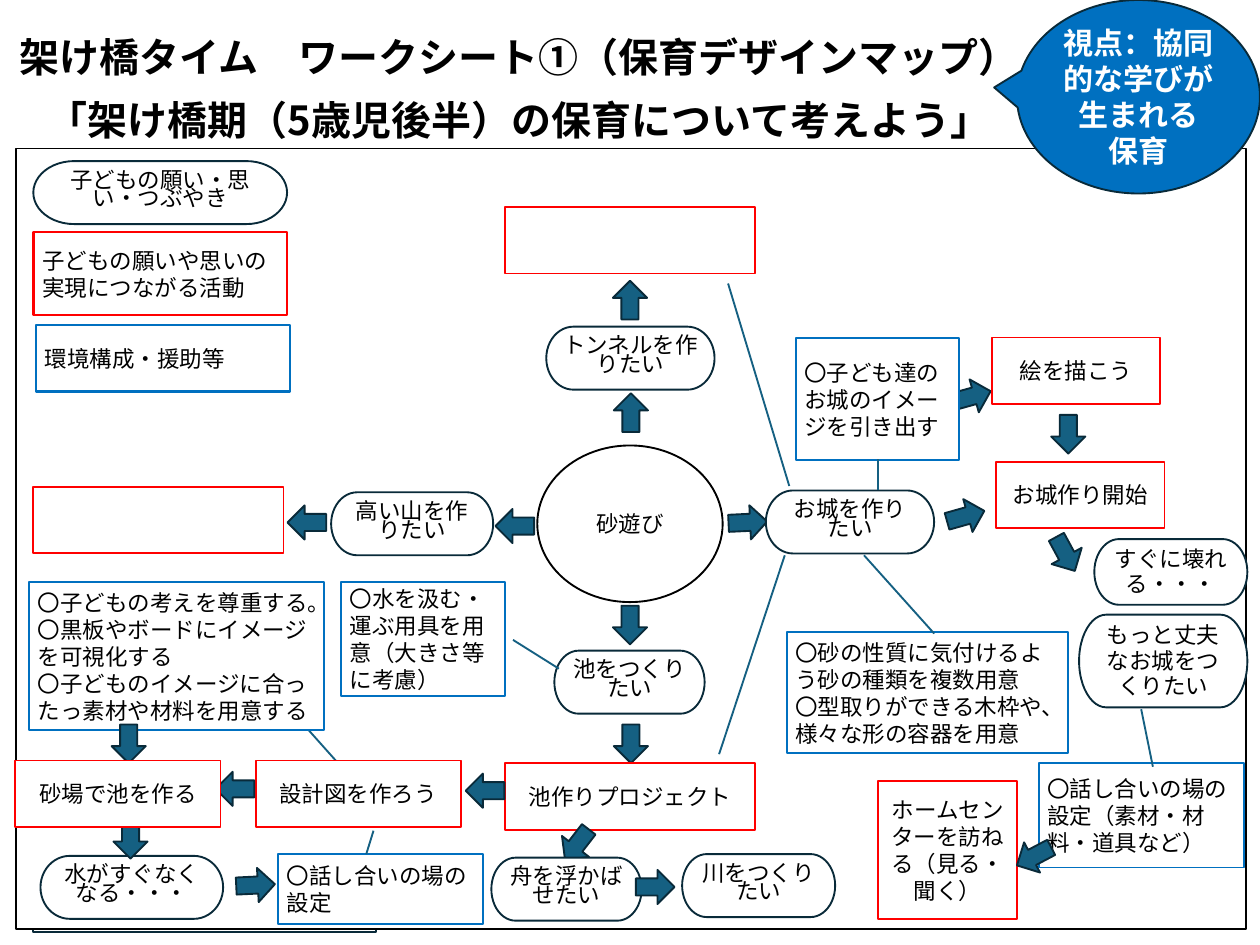
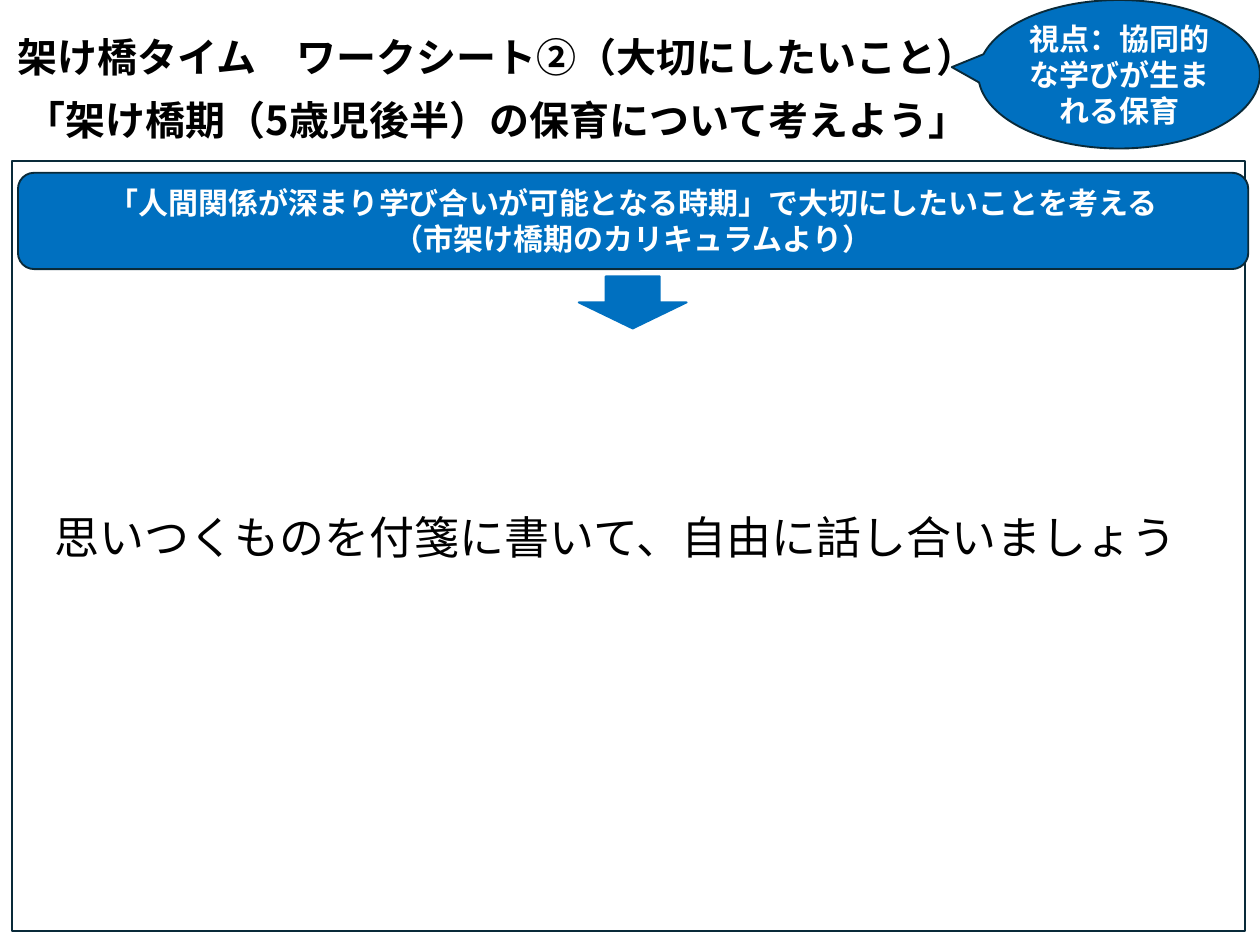
"""Builds two worksheets on planning childcare in the bridging period."""
from dataclasses import dataclass

from lxml import etree
from pptx import Presentation
from pptx import util as u
from pptx.dml.color import RGBColor
from pptx.enum import shapes, text
from pptx.oxml.ns import qn


@dataclass(frozen=True)
class Theme:
    white: str = "FFFFFF"
    black: str = "000000"
    outline: str = "092A39"
    red: str = "FF0000"
    blue: str = "0070C0"
    teal: str = "156082"
    heading_font: str = "Noto Sans CJK JP"
    body_font: str = "Lato"
    prompt_size: int = 36
    title_size: int = 32
    heading_size: int = 24
    body_size: int = 18
    line_width: float = 1.5
    key_width: float = 2


theme = Theme()
preset = shapes.MSO_SHAPE
left, center = text.PP_ALIGN.LEFT, text.PP_ALIGN.CENTER


def add_figure(slide, outline, box, fill, line, width=theme.line_width):
    figure = slide.shapes.add_shape(outline, *map(u.Inches, box))
    figure.shadow.inherit = False
    figure.fill.solid()
    figure.fill.fore_color.rgb = RGBColor.from_string(fill)
    figure.line.color.rgb = RGBColor.from_string(line)
    figure.line.width = u.Pt(width)
    return figure


def write(figure, wording, size, color, font=theme.heading_font, bold=True,
          align=center, spacing=None, anchor=text.MSO_ANCHOR.MIDDLE):
    frame = figure.text_frame
    frame.word_wrap = True
    frame.vertical_anchor = anchor
    frame.text = wording
    for paragraph in frame.paragraphs:
        paragraph.alignment = align
        if spacing:
            paragraph.line_spacing = u.Pt(spacing)
        paragraph.font.size = u.Pt(size)
        paragraph.font.bold = bold
        paragraph.font.color.rgb = RGBColor.from_string(color)
        paragraph.font.name = font
        defaults = paragraph._p.pPr.find(qn("a:defRPr"))
        etree.SubElement(defaults, qn("a:ea")).set("typeface", font)


deck = Presentation()
deck.slide_width, deck.slide_height = u.Inches(14), u.Inches(10.5)

worksheets = [
    dict(
        frames=[((0.37, 7.43, 3.81, 2.93), theme.outline),
                ((0.18, 1.65, 13.67, 8.67), theme.black)],
        title="架け橋タイム　ワークシート➀（保育デザインマップ）",
        title_width=11.54,
        viewpoint="視点：協同的な学びが生まれる\n保育",
        callout=(11.3, 0, 2.7, 2.15),
    ),
    dict(
        frames=[((0.13, 1.79, 13.7, 8.56), theme.outline)],
        title="架け橋タイム　ワークシート➁（大切にしたいこと）",
        title_width=11.05,
        viewpoint="視点：協同的な学びが生まれる保育",
        callout=(10.87, 0, 3.13, 1.65),
    ),
]
theme_question = "「架け橋期（5歳児後半）の保育について考えよう」"

for sheet in worksheets:
    slide = deck.slides.add_slide(deck.slide_layouts[6])
    for box, line in sheet["frames"]:
        add_figure(slide, preset.RECTANGLE, box, theme.white, line)
    title = slide.shapes.add_textbox(
        0, u.Inches(0.15), u.Inches(sheet["title_width"]), u.Inches(1.5))
    write(title, sheet["title"] + "\v" + theme_question,
          theme.title_size, theme.black, spacing=50)
    callout = add_figure(slide, preset.OVAL_CALLOUT, sheet["callout"],
                         theme.blue, theme.outline)
    callout.adjustments[0], callout.adjustments[1] = -0.594, -0.048
    write(callout, sheet["viewpoint"], theme.heading_size, theme.white)

design_map, discussion = deck.slides

pill, block = preset.FLOWCHART_TERMINATOR, preset.RECTANGLE
styles = {
    "topic": (preset.FLOWCHART_CONNECTOR, theme.black, theme.line_width, center, None),
    "wish": (pill, theme.outline, theme.line_width, center, 15),
    "problem": (pill, theme.outline, theme.line_width, center, 20),
    "activity": (block, theme.red, theme.line_width, center, None),
    "support": (block, theme.blue, theme.line_width, left, None),
    "activity key": (block, theme.red, theme.key_width, left, None),
    "support key": (block, theme.blue, theme.key_width, left, None),
}

map_parts = [
    ("wish", (0.37, 1.79, 2.82, 0.7), "子どもの願い・思い・つぶやき"),
    ("activity key", (0.37, 2.58, 2.82, 0.92), "子どもの願いや思いの実現につながる活動"),
    ("support key", (0.4, 3.61, 2.82, 0.74), "環境構成・援助等"),

    ("arrow", (6.82, 4.37), 0),
    ("wish", (6.07, 3.63, 1.87, 0.7), "トンネルを作りたい"),
    ("arrow", (6.81, 3.12), 0),
    ("activity", (5.61, 2.3, 2.78, 0.74), ""),

    ("arrow", (5.53, 5.63), 270),
    ("wish", (3.68, 5.47, 1.8, 0.7), "高い山を作りたい"),
    ("arrow", (3.22, 5.59), 270),
    ("activity", (0.37, 5.41, 2.78, 0.74), ""),

    ("topic", (5.97, 4.95, 2.06, 1.74), "砂遊び"),

    ("arrow", (8.12, 5.59), 87.3),
    ("wish", (8.51, 5.45, 1.87, 0.7), "お城を作りたい"),
    ("arrow", (10.54, 5.52), 74.3),
    ("activity", (11.07, 5.13, 1.87, 0.74), "お城作り開始"),
    ("arrow", (10.61, 4.19), 74.4),
    ("support", (8.74, 7.02, 3.13, 1.35),
     "〇砂の性質に気付けるよう砂の種類を複数用意\n〇型取りができる木枠や、様々な形の容器を用意"),
    ("activity", (11.02, 3.75, 1.87, 0.74), "絵を描こう"),
    ("link", (9.6, 6.17, 10.38, 7.04), None),
    ("support", (8.84, 3.76, 1.82, 1.35), "〇子ども達のお城のイメージを引き出す"),
    ("link", (9.76, 5.44, 9.76, 5.1), None),
    ("arrow", (11.68, 4.61), 180),
    ("arrow", (11.65, 5.94), 151.5),
    ("problem", (11.99, 6.83, 1.87, 1.03), "もっと丈夫なお城をつくりたい"),
    ("problem", (12.16, 5.99, 1.7, 0.73), "すぐに壊れる・・・"),
    ("support", (11.54, 8.48, 2.28, 1.16), "〇話し合いの場の設定（素材・材料・道具など）"),
    ("link", (12.68, 7.88, 12.81, 8.52), None),
    ("activity", (9.76, 8.68, 1.54, 1.53), "ホームセンターを訪ねる（見る・聞く）"),
    ("arrow", (11.3, 9.3), 242.2),

    ("arrow", (6.81, 6.73), 180),
    ("wish", (6.16, 7.23, 1.67, 0.7), "池をつくりたい"),
    ("arrow", (6.82, 8.05), 180),
    ("activity", (5.61, 8.48, 2.78, 0.74), "池作りプロジェクト"),
    ("support", (3.79, 6.47, 1.82, 1.26), "〇水を汲む・運ぶ用具を用意（大きさ等に考慮）"),
    ("link", (5.7, 7.11, 6.21, 7.43), None),
    ("link", (3.32, 7.99, 3.73, 8.45), None),
    ("link", (8.09, 3.15, 8.77, 5.4), None),
    ("link", (7.99, 8.38, 8.72, 6.17), None),

    ("wish", (0.45, 9.51, 2.03, 0.7), "水がすぐなくなる・・・"),
    ("arrow", (1.26, 9.11), 180),
    ("arrow", (2.65, 9.62), 87.2),
    ("support", (3.09, 9.49, 2.28, 0.78), "〇話し合いの場の設定"),
    ("arrow", (5.2, 8.57), 270),
    ("activity", (2.84, 8.45, 2.28, 0.74), "設計図を作ろう"),
    ("support", (0.32, 6.47, 3.28, 1.64),
     "〇子どもの考えを尊重する。\n〇黒板やボードにイメージを可視化する\n"
     "〇子どものイメージに合ったっ素材や材料を用意する"),
    ("arrow", (2.42, 8.55), 270),
    ("arrow", (1.24, 8.05), 180),
    ("activity", (0.17, 8.45, 2.28, 0.74), "砂場で池を作る"),
    ("link", (4.15, 9.23, 4.07, 9.49), None),

    ("arrow", (6.22, 9.17), 217.7),
    ("wish", (5.46, 9.53, 1.67, 0.7), "舟を浮かばせたい"),
    ("arrow", (7.09, 9.64), 90),
    ("wish", (7.58, 9.49, 1.7, 0.7), "川をつくりたい"),
]

for role, place, content in map_parts:
    if role == "arrow":
        arrow = add_figure(design_map, preset.UP_ARROW, (*place, 0.38, 0.43),
                           theme.teal, theme.outline)
        arrow.rotation = content
    elif role == "link":
        link = design_map.shapes.add_connector(
            shapes.MSO_CONNECTOR.STRAIGHT, *map(u.Inches, place))
        link.line.color.rgb = RGBColor.from_string(theme.teal)
        link.line.width = u.Pt(theme.line_width)
        etree.SubElement(link._element.spPr, qn("a:effectLst"))
    else:
        outline, line, width, align, spacing = styles[role]
        idea = add_figure(design_map, outline, place, theme.white, line, width)
        if content:
            write(idea, content, theme.body_size, theme.black, theme.body_font,
                  False, align, spacing)

goal = add_figure(discussion, preset.ROUNDED_RECTANGLE, (0.2, 1.92, 13.67, 1.07),
                  theme.blue, theme.outline)
write(goal, "「人間関係が深まり学び合いが可能となる時期」で大切にしたいことを考える\n"
      "（市架け橋期のカリキュラムより）", theme.heading_size, theme.white)
add_figure(discussion, preset.DOWN_ARROW, (6.43, 3.07, 1.2, 0.58),
           theme.blue, theme.blue)
prompt = discussion.shapes.add_textbox(
    *map(u.Inches, (0.38, 5.61, 12.92, 0.71)))
write(prompt, "思いつくものを付箋に書いて、自由に話し合いましょう", theme.prompt_size,
      theme.black, bold=False, anchor=text.MSO_ANCHOR.TOP)

deck.save("out.pptx")
